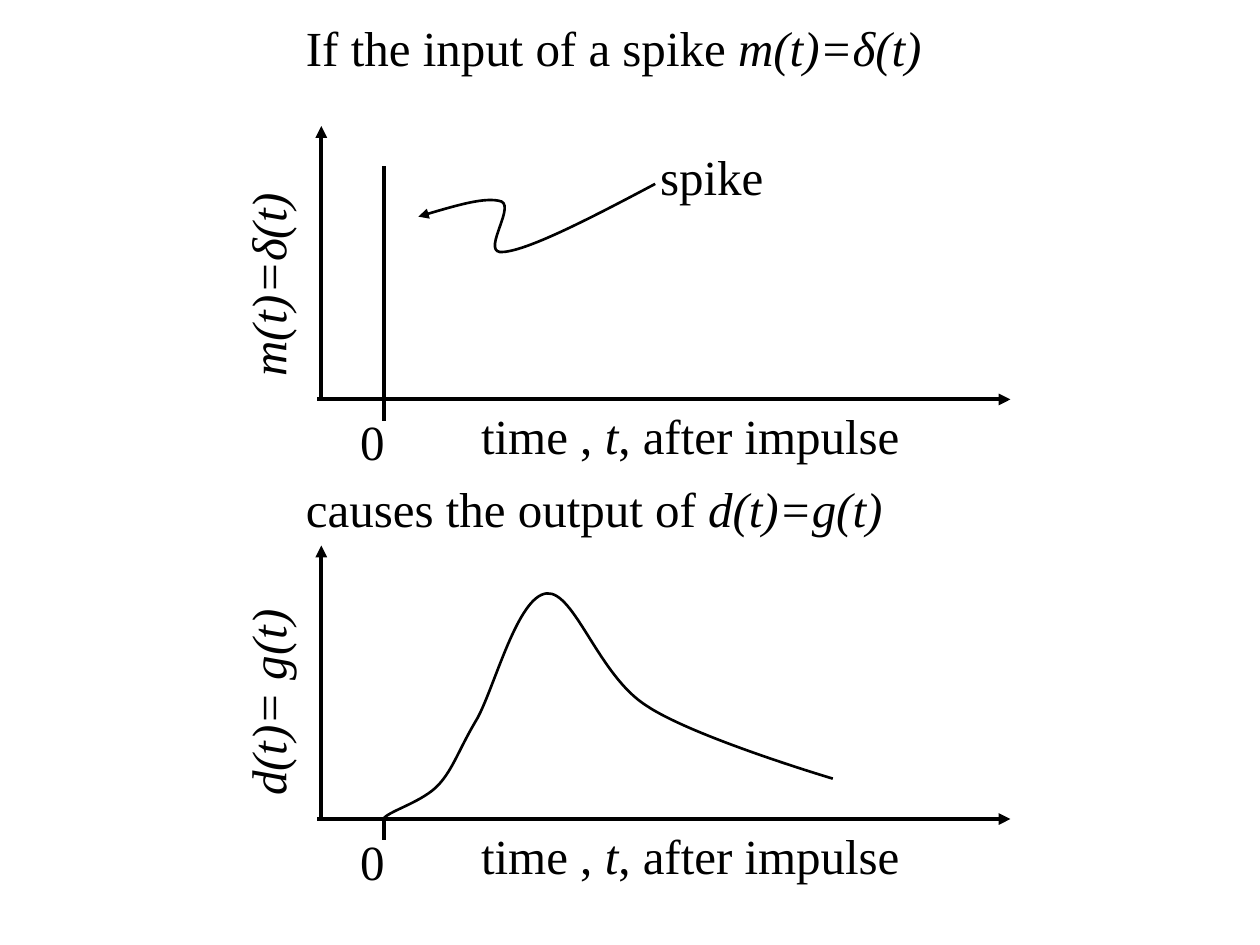
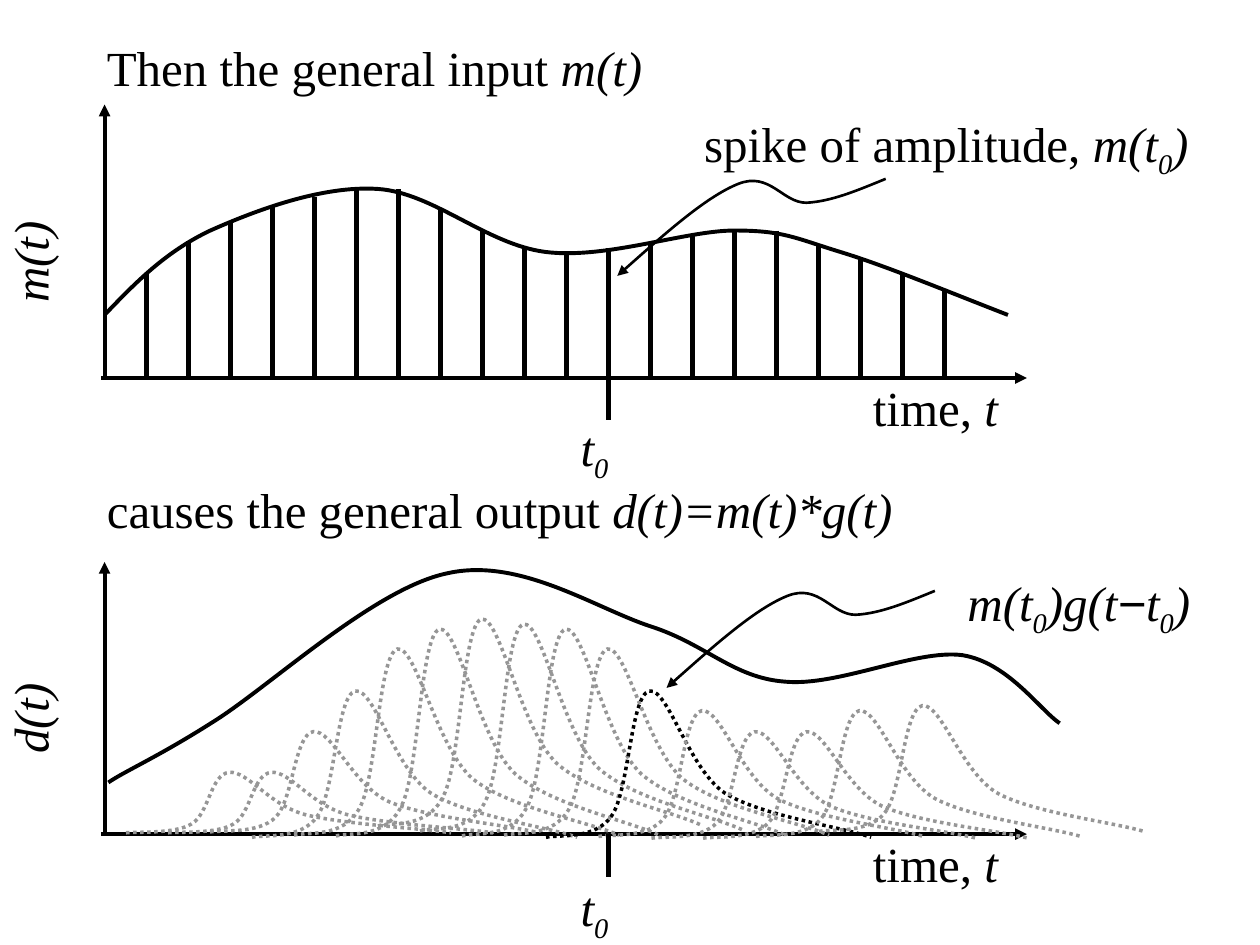
from dataclasses import dataclass

from lxml import etree
from pptx import Presentation
from pptx import util as u
from pptx.dml.color import RGBColor
from pptx.enum import dml, shapes, text
from pptx.oxml.ns import qn

COLORS = {"ink": "000000", "pulse": "969696"}
FONT, MINUS_FONT = "Times New Roman", "Arial"
TEXT_SIZE = 28
THIN, MEDIUM, THICK = 1.5, 2.25, 3
SPIKE_GAP = 1 / 3
SPIKE_T0 = 11

TIME_AFTER_IMPULSE = [("time , ", ""), ("t", "italic"), (", after impulse", "")]
TIME = [("time, ", ""), ("t", "italic")]
T_ZERO = [("t", "italic"), ("0", "sub")]

SPIKE_POINTER = [(0.77, 0.72), (1.04, 0.64), (1.31, 0.56), (1.43, 0.6),
                 (1.54, 0.65), (1.25, 1.03), (1.45, 1), (1.66, 0.98),
                 (2.16, 0.72), (2.65, 0.46)]
RESPONSE = [(0.5, 2.16), (0.56, 2.1), (0.81, 2.03), (0.93, 1.9), (1.05, 1.77),
            (1.09, 1.62), (1.24, 1.37), (1.38, 1.11), (1.56, 0.4), (1.79, 0.38),
            (2.01, 0.36), (2.2, 1.03), (2.58, 1.27), (2.95, 1.52), (4.06, 1.85),
            (4.06, 1.85)]
INPUT = [(0, 1.67), (0.24, 1.42), (0.48, 1.17), (0.84, 1), (1.2, 0.84),
         (1.73, 0.64), (2.17, 0.67), (2.61, 0.7), (3.03, 1.11), (3.5, 1.17),
         (3.98, 1.23), (4.61, 1), (5, 1), (5.39, 1), (5.48, 1.06),
         (5.84, 1.17), (6.2, 1.28), (6.68, 1.48), (7.17, 1.67)]
OUTPUT = [(0.03, 1.75), (0.16, 1.66), (0.42, 1.55), (0.86, 1.27), (1.31, 0.99),
          (2.14, 0.21), (2.72, 0.09), (3.29, -0.04), (3.88, 0.36), (4.33, 0.51),
          (4.77, 0.65), (4.99, 0.92), (5.4, 0.95), (5.82, 0.99), (6.44, 0.69),
          (6.81, 0.74), (7.17, 0.8), (7.42, 1.17), (7.58, 1.28)]
WAVY_POINTER = [(0, 0.83), (0.36, 0.51), (0.71, 0.2), (0.96, 0.1), (1.21, 0),
                (1.31, 0.25), (1.5, 0.25), (1.7, 0.24), (1.91, 0.15), (2.13, 0.06)]
UNIT_PULSE = [(0, 0.98), (0.09, 0.96), (0.39, 1), (0.52, 0.84), (0.66, 0.68),
              (0.67, 0.05), (0.82, 0.02), (0.97, 0), (1.13, 0.53), (1.42, 0.69),
              (1.71, 0.84), (2.34, 0.91), (2.58, 0.98)]

SPIKE_TOPS = [1.34, 1.08, 0.92, 0.8, 0.73, 0.67, 0.67, 0.84, 1, 1.13, 1.17,
              1.14, 1.1, 1.03, 1, 1, 1.11, 1.22, 1.34, 1.46]
PULSE_LEFTS = [0.17 + i * SPIKE_GAP for i in range(11)] + [3.92, 4.34, 4.75, 5.17, 5.67]
PULSE_TOPS = [1.66, 1.66, 1.33, 1, 0.66, 0.5, 0.42, 0.46, 0.5, 0.66, 1,
              1.16, 1.33, 1.33, 1.16, 1.12]
PULSE_HEIGHTS = [0.5, 0.5, 0.83, 1.21, 1.54, 1.71, 1.71, 1.71, 1.71, 1.54, 1.21,
                 1.04, 0.88, 0.88, 1.04, 1.04]
PULSE_T0 = 10


@dataclass
class Box:
    left: float
    top: float
    width: float
    height: float

    def inside(self, left, top, width, height):
        return Box(self.left + left, self.top + top, width, height)


def style_line(shape, weight, color="ink", arrow=False, dotted=False):
    shape.line.color.rgb = RGBColor.from_string(COLORS[color])
    shape.line.width = u.Pt(weight)
    if dotted:
        shape.line.dash_style = dml.MSO_LINE.ROUND_DOT
    properties = shape._element.spPr
    if arrow:
        etree.SubElement(properties.find(qn("a:ln")), qn("a:headEnd"), type="triangle")
    etree.SubElement(properties, qn("a:effectLst"))


def add_line(slide, box, start, end, weight, arrow=False):
    x1, y1, x2, y2 = [u.Inches(value) for value in (
        box.left + start[0], box.top + start[1], box.left + end[0], box.top + end[1])]
    connector = slide.shapes.add_connector(shapes.MSO_CONNECTOR.STRAIGHT, x1, y1, x2, y2)
    style_line(connector, weight, arrow=arrow)


def bend_segments(shape):
    outline = shape._element.spPr.find(".//" + qn("a:path"))
    segments = outline.findall(qn("a:lnTo"))
    for first in range(0, len(segments), 3):
        curve = etree.SubElement(outline, qn("a:cubicBezTo"))
        for segment in segments[first:first + 3]:
            curve.append(segment[0])
            outline.remove(segment)


def add_curve(slide, box, points, weight, **line_style):
    start, *rest = [(u.Inches(box.left + x), u.Inches(box.top + y)) for x, y in points]
    builder = slide.shapes.build_freeform(*start)
    builder.add_line_segments(rest, close=False)
    shape = builder.convert_to_shape()
    bend_segments(shape)
    shape.fill.background()
    style_line(shape, weight, **line_style)


def add_text(slide, box, runs, rotation=0, hanging=False):
    shape = slide.shapes.add_textbox(*map(u.Inches, (box.left, box.top, box.width, box.height)))
    shape.rotation = rotation
    frame = shape.text_frame
    frame.word_wrap = True
    paragraph = frame.paragraphs[0]
    if hanging:
        paragraph.line_spacing = 0.9
        paragraph.space_before = u.Pt(TEXT_SIZE * 0.2)
        properties = paragraph._p.get_or_add_pPr()
        properties.set("marL", str(u.Inches(0.38)))
        properties.set("indent", str(u.Inches(-0.38)))
    else:
        frame.auto_size = text.MSO_AUTO_SIZE.SHAPE_TO_FIT_TEXT
    for wording, style in runs:
        run = paragraph.add_run()
        run.text = wording
        run.font.name = MINUS_FONT if style == "minus" else FONT
        run.font.size = u.Pt(TEXT_SIZE)
        run.font.italic = bool(style)
        run.font.color.rgb = RGBColor.from_string(COLORS["ink"])
        if style == "sub":
            run._r.get_or_add_rPr().set("baseline", "-25000")


def add_axes(slide, box):
    add_line(slide, box, (0, 0), (0, box.height), MEDIUM, arrow=True)
    add_line(slide, box, (box.width, box.height), (-0.03, box.height), MEDIUM, arrow=True)


def impulse_panel(slide, box, title_box, title, label_box, label, zero_top):
    add_axes(slide, box)
    add_line(slide, box, (0.5, zero_top), (0.5, box.height + 0.17), MEDIUM)
    add_text(slide, box.inside(1.17, box.height, 4, 0.57), TIME_AFTER_IMPULSE)
    add_text(slide, box.inside(0.21, box.height + 0.05, 0.67, 0.57), [("0", "")])
    add_text(slide, label_box, [(label, "italic")], rotation=270)
    add_text(slide, title_box, title)


def general_panel(slide, box, title_box, title, label_box, label, t_zero_top):
    add_axes(slide, box)
    add_text(slide, box.inside(6, box.height, 1.67, 0.67), TIME, hanging=True)
    add_text(slide, box.inside(3.68, box.height + t_zero_top, 1.67, 0.67), T_ZERO, hanging=True)
    add_text(slide, label_box, [(label, "italic")], rotation=270, hanging=True)
    add_text(slide, title_box, title)


def add_spikes(slide, box):
    for i, top in enumerate(SPIKE_TOPS):
        x = (i + 1) * SPIKE_GAP
        bottom = box.height + (0.33 if i == SPIKE_T0 else 0)
        add_line(slide, box, (x, top), (x, bottom), THICK)


def add_pulses(slide, box):
    for i, (left, top, height) in enumerate(zip(PULSE_LEFTS, PULSE_TOPS, PULSE_HEIGHTS)):
        points = [(left + x, top + y * height) for x, y in UNIT_PULSE]
        add_curve(slide, box, points, 2, dotted=True,
                  color="ink" if i == PULSE_T0 else "pulse")


def impulse_slide(slide):
    spike = Box(2.55, 1, 5.47, 2.17)
    impulse_panel(slide, spike, Box(2.33, 0.09, 5.75, 0.57),
                  [("If the input of a spike ", ""), ("m(t)=δ(t)", "italic")],
                  Box(1.12, 1.8, 2, 0.57), "m(t)=δ(t)", zero_top=0.32)
    add_curve(slide, spike, SPIKE_POINTER, THIN, arrow=True)
    add_text(slide, spike.inside(2.59, 0.11, 1.17, 0.57), [("spike", "")])

    response = Box(2.55, 4.33, 5.47, 2.17)
    impulse_panel(slide, response, Box(2.33, 3.75, 5.42, 0.57),
                  [("causes the output of ", ""), ("d(t)=g(t)", "italic")],
                  Box(1.16, 5.17, 1.92, 0.57), "d(t)= g(t)", zero_top=response.height)
    add_curve(slide, response, RESPONSE, THIN)


def general_slide(slide):
    source = Box(0.83, 0.83, 7.32, 2.17)
    general_panel(slide, source, Box(0.75, 0.25, 5.75, 0.57),
                  [("Then the general input ", ""), ("m(t)", "italic")],
                  Box(-0.5, 1.33, 1.67, 0.67), "m(t)", t_zero_top=0.27)
    add_curve(slide, source, INPUT, MEDIUM)
    add_spikes(slide, source)
    add_curve(slide, source.inside(4.07, 0.53, 2.13, 0.83), WAVY_POINTER, THIN, arrow=True)
    add_text(slide, source.inside(4.66, 0.03, 4.18, 0.83),
             [("spike of amplitude, ", ""), ("m(t", "italic"), ("0", "sub"), (")", "italic")],
             hanging=True)

    result = Box(0.83, 4.46, 7.32, 2.16)
    general_panel(slide, result, Box(0.75, 3.76, 6.5, 0.57),
                  [("causes the general output ", ""), ("d(t)=m(t)*g(t)", "italic")],
                  Box(-0.58, 4.83, 1.83, 0.67), "d(t)", t_zero_top=0.3)
    add_curve(slide, result, OUTPUT, MEDIUM)
    add_pulses(slide, result)
    add_line(slide, result, (4, result.height), (4, result.height + 0.34), THICK)
    add_curve(slide, result.inside(4.46, 0.17, 2.13, 0.83), WAVY_POINTER, THIN, arrow=True)
    add_text(slide, result.inside(6.75, 0.04, 2.33, 0.67),
             [("m(t", "italic"), ("0", "sub"), (")g(t", "italic"), ("−", "minus"),
              ("t", "italic"), ("0", "sub"), (")", "italic")], hanging=True)


def main():
    presentation = Presentation()
    presentation.slide_width, presentation.slide_height = u.Inches(10), u.Inches(7.5)
    for build in (impulse_slide, general_slide):
        build(presentation.slides.add_slide(presentation.slide_layouts[6]))
    presentation.save("out.pptx")


if __name__ == "__main__":
    main()
